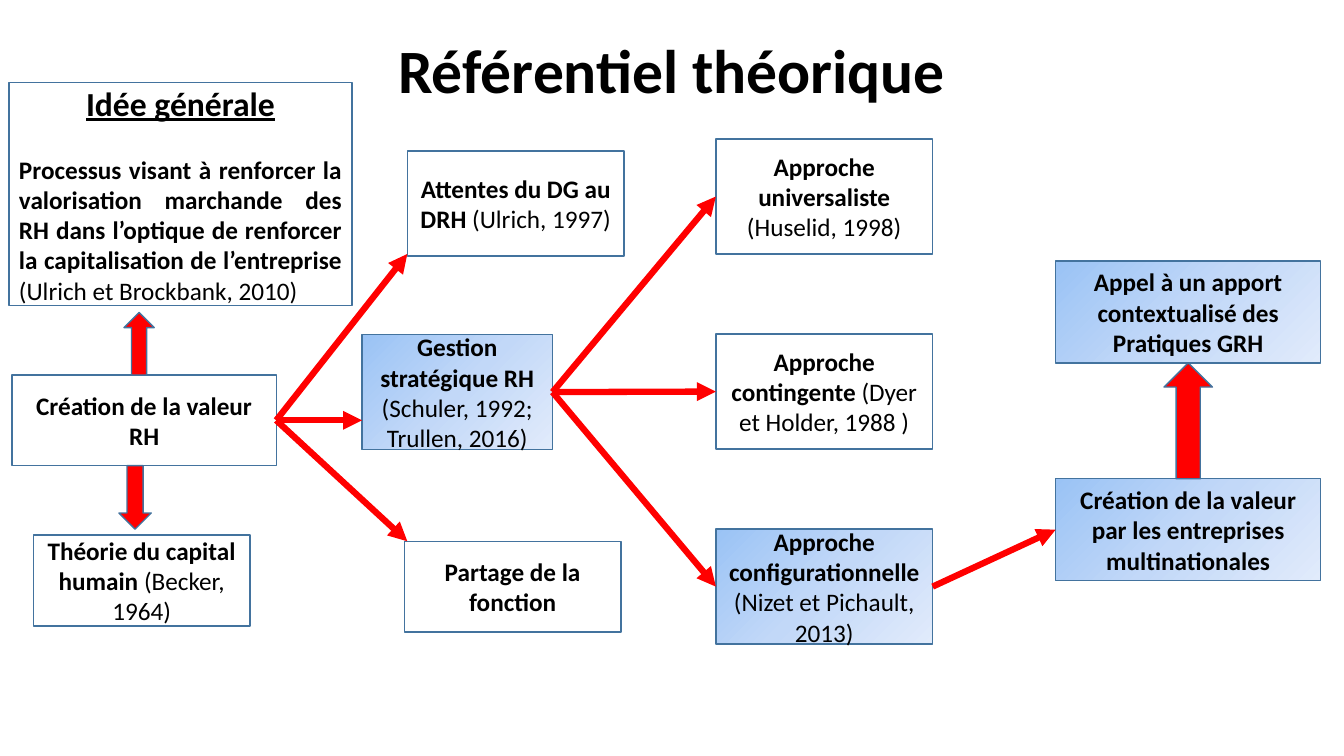
from copy import deepcopy

from lxml.etree import SubElement
from pptx import Presentation
from pptx.dml.color import RGBColor
from pptx.enum.shapes import MSO_CONNECTOR, MSO_SHAPE
from pptx.enum.text import MSO_ANCHOR, MSO_AUTO_SIZE, PP_ALIGN
from pptx.oxml.ns import qn
from pptx.util import Inches, Pt

WHITE, BLACK, RED, OUTLINE = "FFFFFF", "000000", "FF0000", "43739E"
HIGHLIGHT = ("9AC3F5", "C2D8F8", "E1EBFB")
LEFT_SITE, RIGHT_SITE = 1, 3


def rgb(value):
    return RGBColor.from_string(value)


def add_text(paragraph, text, size=18, bold=True, underline=False,
             align=PP_ALIGN.CENTER, color=BLACK):
    paragraph.alignment = align
    run = paragraph.add_run()
    run.text = text
    run.font.name = "Calibri"
    run.font.size = Pt(size)
    run.font.bold = bold
    run.font.underline = underline
    run.font.color.rgb = rgb(color)


def fill_highlight(shape):
    shape.fill.gradient()
    shape.fill.gradient_angle = 315
    first = shape.fill._fill._gradFill.gsLst[0]
    first.addnext(deepcopy(first))
    for stop, color, position in zip(shape.fill.gradient_stops, HIGHLIGHT, (0, 0.5, 1)):
        stop.color.rgb = rgb(color)
        stop.position = position


def add_block(slide, left, top, width, height, preset=MSO_SHAPE.RECTANGLE,
              color=WHITE, highlighted=False):
    block = slide.shapes.add_shape(
        preset, Inches(left), Inches(top), Inches(width), Inches(height))
    block.shadow.inherit = False
    if highlighted:
        fill_highlight(block)
    else:
        block.fill.solid()
        block.fill.fore_color.rgb = rgb(color)
    block.line.color.rgb = rgb(OUTLINE)
    block.line.width = Pt(1)
    block.text_frame.word_wrap = True
    block.text_frame.vertical_anchor = MSO_ANCHOR.MIDDLE
    return block


def add_concept(slide, left, top, width, height, concept, authors="", highlighted=False):
    block = add_block(slide, left, top, width, height, highlighted=highlighted)
    paragraph = block.text_frame.paragraphs[0]
    add_text(paragraph, concept)
    if authors:
        add_text(paragraph, authors, bold=False)
    return block


def add_link(slide, source, target=None, end=(0, 0)):
    link = slide.shapes.add_connector(
        MSO_CONNECTOR.STRAIGHT, 0, 0, Inches(end[0]), Inches(end[1]))
    link.begin_connect(source, RIGHT_SITE)
    if target is not None:
        link.end_connect(target, LEFT_SITE)
    link.line.color.rgb = rgb(RED)
    link.line.width = Pt(4.5)
    SubElement(link.line._get_or_add_ln(), qn("a:tailEnd"), type="triangle")
    SubElement(link._element.spPr, qn("a:effectLst"))


def add_title(slide, left, top, width, height):
    title = slide.shapes.title
    title.left, title.top = Inches(left), Inches(top)
    title.width, title.height = Inches(width), Inches(height)
    title.text_frame.auto_size = MSO_AUTO_SIZE.NONE
    title.text_frame.vertical_anchor = MSO_ANCHOR.MIDDLE
    heading = title.text_frame.paragraphs[0]
    heading.line_spacing = 0.9
    add_text(heading, "Référentiel théorique", size=44)


def add_general_idea(slide, left, top, width, height):
    idea = add_block(slide, left, top, width, height).text_frame
    add_text(idea.paragraphs[0], "Idée générale", size=24, underline=True)
    definition = idea.add_paragraph()
    definition.space_before = Pt(22)
    add_text(definition, "Processus visant à renforcer la valorisation marchande des RH "
             "dans l’optique de renforcer la capitalisation de l’entreprise ",
             align=PP_ALIGN.JUSTIFY)
    add_text(definition, "(Ulrich et Brockbank, 2010)", bold=False, align=PP_ALIGN.JUSTIFY)


def add_value_creation(slide, left, top, width, height):
    bottom = top + height
    value = add_concept(slide, left, top, width, height, "Création de la valeur RH")
    add_concept(slide, left + 0.21, bottom + 0.69, 2.15, 0.9,
                "Théorie du capital humain ", "(Becker, 1964)")
    add_block(slide, left + 1.06, bottom, 0.32, 0.63, MSO_SHAPE.DOWN_ARROW, RED)
    add_block(slide, left + 1.11, top - 0.62, 0.3, 0.62, MSO_SHAPE.UP_ARROW, RED)
    return value


def add_hr_roles(slide, left, top, width, height, value):
    bottom = top + height
    add_concept(slide, left + 0.45, top, 2.15, 1.04,
                "Attentes du DG au DRH ", "(Ulrich, 1997)")
    add_concept(slide, left + 0.42, bottom - 0.9, 2.15, 0.9, "Partage de la fonction")
    strategy = add_concept(slide, left, top + 1.82, 1.89, 1.14, "Gestion stratégique RH ",
                           "(Schuler, 1992; Trullen, 2016)", highlighted=True)
    for end in ((left + 0.45, top + 1.02), (left, top + 2.67), (left + 0.45, bottom - 0.9)):
        add_link(slide, value, end=end)
    return strategy


def add_approaches(slide, left, top, width, height, strategy):
    approaches = (
        ("Approche universaliste ", "(Huselid, 1998)", False),
        ("Approche contingente ", "(Dyer et Holder, 1988 )", False),
        ("Approche configurationnelle", "(Nizet et Pichault, 2013)", True),
    )
    block_height = 1.14
    step = (height - block_height) / (len(approaches) - 1)
    for row, (concept, authors, highlighted) in enumerate(approaches):
        approach = add_concept(slide, left, top + row * step, width, block_height,
                               concept, authors, highlighted)
        add_link(slide, strategy, approach)
    return approach


def add_multinationals(slide, left, top, width, height, configuration):
    block_height = 1.01
    lower_top = top + height - block_height
    multinationals = add_concept(
        slide, left, lower_top, width, block_height,
        "Création de la valeur par les entreprises multinationales", highlighted=True)
    add_concept(slide, left, top, width, block_height,
                "Appel à un apport contextualisé des Pratiques GRH", highlighted=True)
    add_block(slide, left + (width - 0.48) / 2, top + block_height, 0.48,
              height - 2 * block_height, MSO_SHAPE.UP_ARROW, RED)
    add_link(slide, configuration, multinationals)


def main():
    deck = Presentation()
    deck.slide_width, deck.slide_height = Inches(13.33), Inches(7.5)
    slide = deck.slides.add_slide(deck.slide_layouts[5])
    add_title(slide, 0, 0.25, 13.33, 0.96)
    add_general_idea(slide, 0.09, 0.82, 3.4, 2.21)
    value = add_value_creation(slide, 0.12, 3.72, 2.62, 0.9)
    strategy = add_hr_roles(slide, 3.59, 1.5, 2.6, 4.77, value)
    configuration = add_approaches(slide, 7.1, 1.38, 2.15, 5.01, strategy)
    add_multinationals(slide, 10.47, 2.59, 2.63, 3.17, configuration)
    deck.save("out.pptx")


if __name__ == "__main__":
    main()
